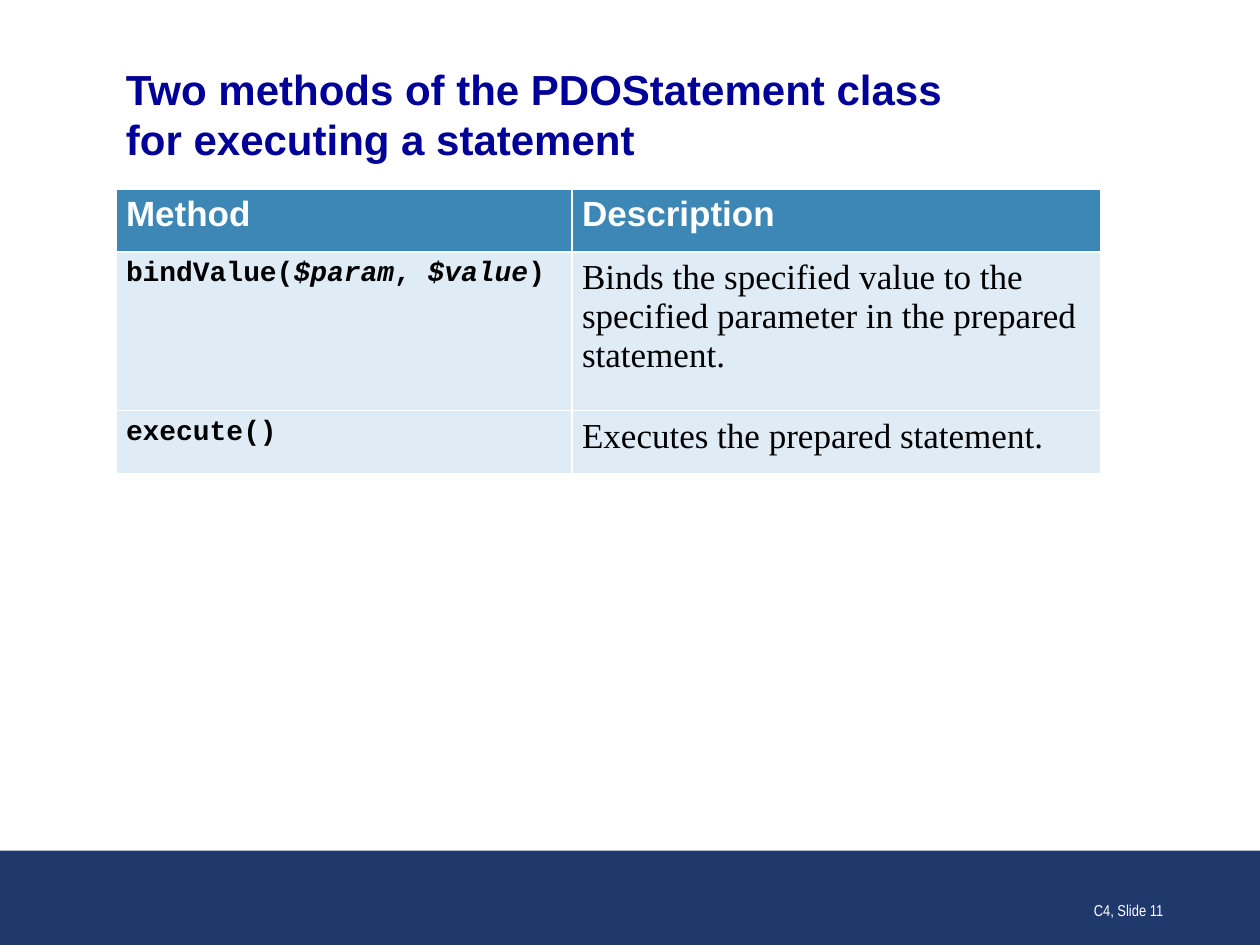
from pptx import Presentation
from pptx.dml.color import RGBColor
from pptx.enum.shapes import MSO_SHAPE as SHAPE
from pptx.enum.text import MSO_ANCHOR as ANCHOR, PP_ALIGN as ALIGN
from pptx.util import Inches, Pt


def color(value):
    """Turn a hex string into a colour."""
    return RGBColor.from_string(value)


class Deck:
    """Holds the style and the current slide."""

    NAVY, TITLE, HEAD, BODY = "20396D", "000099", "3D87B7", "DFECF5"
    WHITE, BLACK = "FFFFFF", "000000"
    SANS, NARROW, CODE, SERIF = "Arial", "Arial Narrow", "Courier New", "Times New Roman"

    def __init__(self, width=10, height=7.5):
        """Start a presentation with one blank slide."""
        self.prs = Presentation()
        self.prs.slide_width, self.prs.slide_height = Inches(width), Inches(height)
        self.s = self.prs.slides.add_slide(self.prs.slide_layouts[6])

    def box(self, x, y, w, h):
        """Scale shares of the slide to lengths."""
        W, H = self.prs.slide_width, self.prs.slide_height
        return [round(v) for v in (x * W, y * H, w * W, h * H)]

    def font(self, p, name, size, fill, bold=False):
        """Format every run of a paragraph."""
        for r in p.runs:
            r.font.name, r.font.size, r.font.bold = name, Pt(size), bold
            r.font.color.rgb = color(fill)

    def band(self, place, fill):
        """Draw a plain filled rectangle."""
        sp = self.s.shapes.add_shape(SHAPE.RECTANGLE, *self.box(*place))
        sp.shadow.inherit = False
        sp.fill.solid()
        sp.fill.fore_color.rgb = color(fill)
        sp.line.fill.background()

    def text(self, place, words, style, anchor, align=ALIGN.LEFT, inset=0):
        """Add a wrapping text box with one paragraph."""
        tf = self.s.shapes.add_textbox(*self.box(*place)).text_frame
        tf.word_wrap, tf.vertical_anchor = True, anchor
        tf.margin_left = tf.margin_right = Inches(inset)
        tf.margin_top = tf.margin_bottom = Inches(inset / 2)
        p = tf.paragraphs[0]
        p.text, p.alignment = words, align
        self.font(p, *style)

    def cell(self, cell, parts, style, fill):
        """Fill a cell with runs, every second one in italics."""
        cell.fill.solid()
        cell.fill.fore_color.rgb = color(fill)
        cell.margin_left = cell.margin_right = Inches(0.08)
        cell.margin_top = cell.margin_bottom = Inches(0.05)
        p = cell.text_frame.paragraphs[0]
        p.space_after = Pt(6)
        for i, part in enumerate(parts):
            r = p.add_run()
            r.text, r.font.italic = part, i % 2 == 1
        self.font(p, *style)

    def table(self, place, widths, heights, rows):
        """Add a table with a header row and a code column."""
        shape = self.s.shapes.add_table(len(rows), len(widths), *self.box(*place))
        table = shape.table
        for column, width in zip(table.columns, widths):
            column.width = Inches(width)
        head = (self.SANS, 20, self.WHITE, True)
        body = [(self.CODE, 16, self.BLACK, True), (self.SERIF, 20, self.BLACK)]
        for i, (row, height) in enumerate(zip(rows, heights)):
            table.rows[i].height = Inches(height)
            for j, parts in enumerate(row):
                style, fill = (body[j], self.BODY) if i else (head, self.HEAD)
                self.cell(table.cell(i, j), parts, style, fill)


def main():
    """Build the slide."""
    d = Deck()
    d.band((0, 0.9, 1, 0.1), d.NAVY)
    d.text((0.1, 0.07, 0.8, 0.1),
           "Two methods of the PDOStatement class\vfor executing a statement",
           (d.SANS, 24, d.TITLE, True), ANCHOR.MIDDLE)
    d.table((0.092, 0.2, 0.782, 0.3), (3.62, 4.2), (0.5, 1.26, 0.5), [
        (["Method"], ["Description"]),
        (["bindValue(", "$param", ", ", "$value", ")"],
         ["Binds the specified value to the specified parameter in the prepared statement."]),
        (["execute()"], ["Executes the prepared statement."]),
    ])
    d.text((0.725, 0.91, 0.208, 0.07), "C4, Slide 11",
           (d.NARROW, 9, d.WHITE), ANCHOR.BOTTOM, ALIGN.RIGHT, 0.1)
    d.prs.save("out.pptx")


if __name__ == "__main__":
    main()
